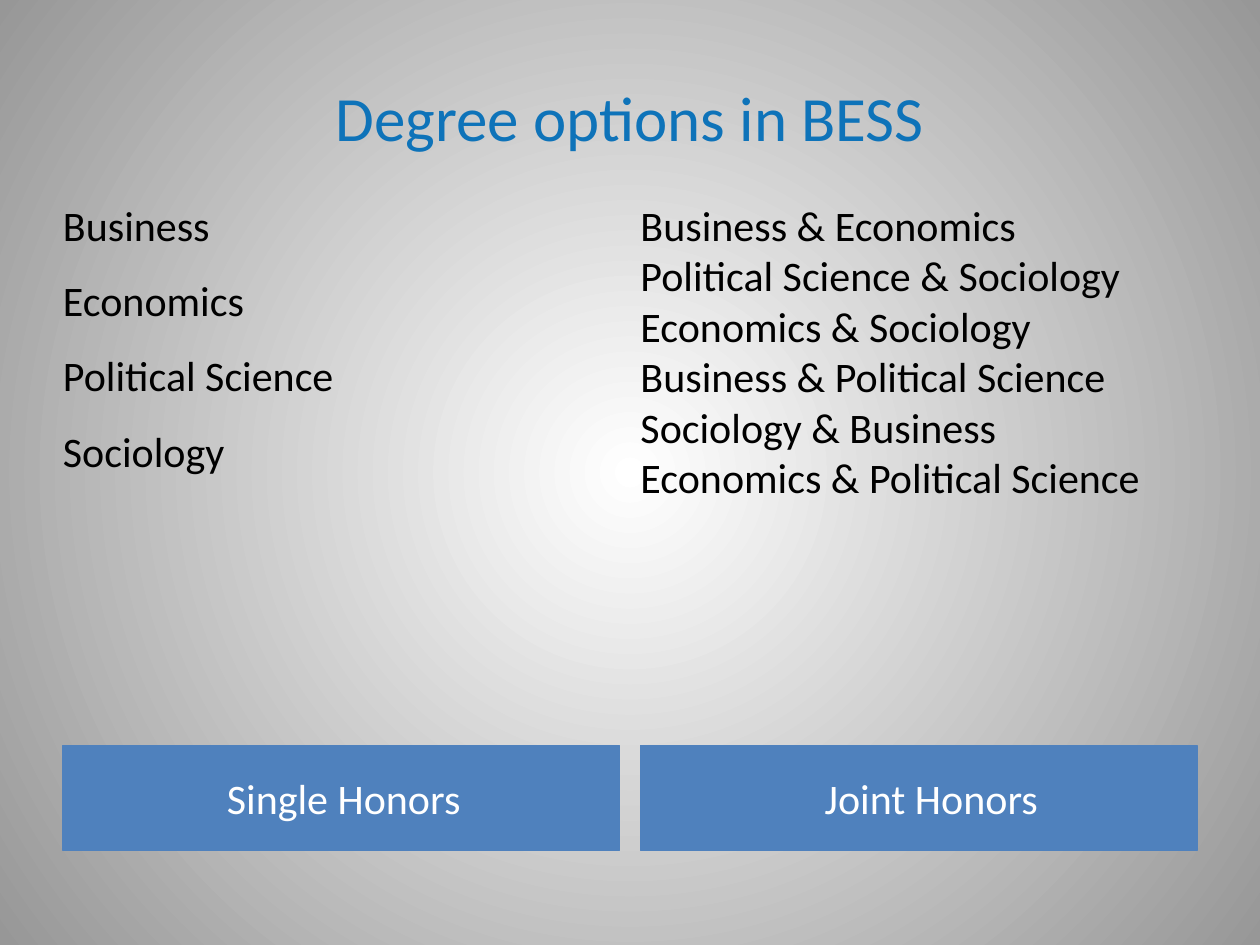
from lxml import etree
from pptx import Presentation
from pptx.dml.color import RGBColor
from pptx.enum import shapes, text
from pptx.oxml.ns import qn
from pptx.util import Pt

FONT = "Calibri"
BLUE, WHITE, BLACK = "4F81BD", "FFFFFF", "000000"
LEFT, WIDE, STEP = 36, 318, 330  # column grid
GAP = 14.2

# heading, right inset, space before each line, lines
COLUMNS = [
    ("Single Honors", 11.5, GAP,
     ["Business", "Economics", "Political Science", "Sociology"]),
    ("Joint Honors", 0, 0,
     ["Business & Economics", "Political Science & Sociology",
      "Economics & Sociology", "Business & Political Science",
      "Sociology & Business", "Economics & Political Science"]),
]


def tint(color, code):
    color.rgb = RGBColor.from_string(code)


def paint(slide, inner, outer):
    """Fill the background with a round gradient."""
    fill = slide.background.fill
    fill.gradient()
    for stop, code in zip(fill.gradient_stops, (inner, outer)):
        tint(stop.color, code)
    grad = slide.element.find(".//" + qn("a:gradFill"))
    grad.remove(grad.find(qn("a:lin")))
    ring = etree.SubElement(grad, qn("a:path"), path="circle")
    etree.SubElement(ring, qn("a:fillToRect"),
                     {side: "50000" for side in "ltrb"})


def write(shape, lines, size, code, align, anchor, before=0, inset=(0, 0)):
    frame = shape.text_frame
    frame.word_wrap = True
    frame.vertical_anchor = anchor
    frame.margin_left, frame.margin_right = map(Pt, inset)
    frame.margin_top = frame.margin_bottom = 0
    frame.text = "\n".join(lines)
    for para in frame.paragraphs:
        para.alignment = align
        para.space_before = Pt(before)
        para.font.name = FONT
        para.font.size = Pt(size)
        tint(para.font.color, code)


def add_text(slide, box, *args, **more):
    write(slide.shapes.add_textbox(*map(Pt, box)), *args, **more)


def add_bar(slide, box, label, right):
    bar = slide.shapes.add_shape(shapes.MSO_SHAPE.RECTANGLE, *map(Pt, box))
    bar.shadow.inherit = False
    bar.fill.solid()
    tint(bar.fill.fore_color, BLUE)
    tint(bar.line.color, BLUE)
    bar.line.width = Pt(0.75)
    write(bar, [label], 24, WHITE, text.PP_ALIGN.CENTER,
          text.MSO_ANCHOR.MIDDLE, GAP, (14.4, right))


def main():
    deck = Presentation()
    deck.slide_width, deck.slide_height = Pt(720), Pt(540)
    slide = deck.slides.add_slide(deck.slide_layouts[6])
    paint(slide, WHITE, "979797")

    # Title
    add_text(slide, (LEFT, 21.6, 648, 90), ["Degree options in BESS"], 36,
             "0E73B9", text.PP_ALIGN.CENTER, text.MSO_ANCHOR.MIDDLE)

    # Columns, each with its heading bar below
    for i, (label, right, before, lines) in enumerate(COLUMNS):
        x = LEFT + i * STEP
        add_bar(slide, (x, 426, WIDE, 60), label, right)
        add_text(slide, (x, 114, WIDE, 310), lines, 24, BLACK,
                 text.PP_ALIGN.LEFT, text.MSO_ANCHOR.TOP, before)

    deck.save("out.pptx")


if __name__ == "__main__":
    main()
